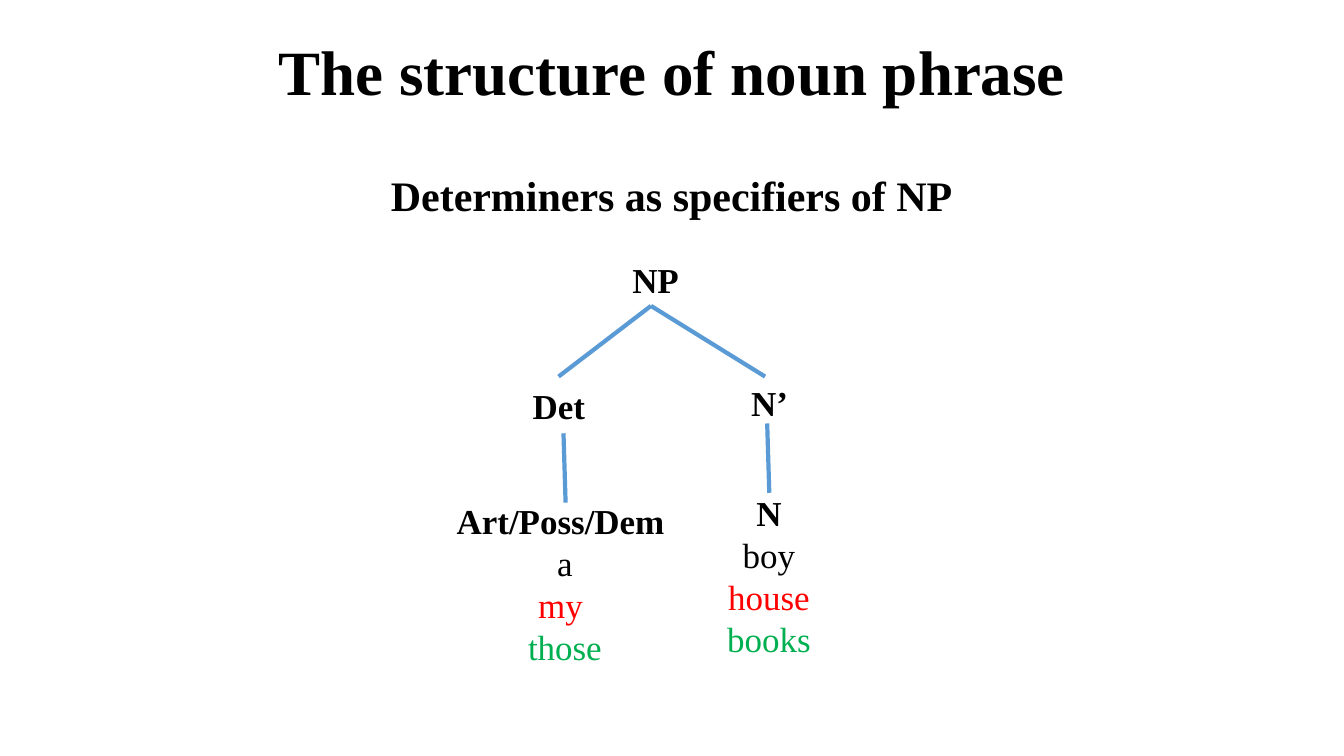
from dataclasses import dataclass

from lxml import etree
from pptx import Presentation
from pptx import util as u
from pptx.dml.color import RGBColor
from pptx.enum import shapes, text
from pptx.oxml import ns


@dataclass(frozen=True)
class Theme:
    font: str = "Times New Roman"
    background: str = "FFFFFF"
    ink: str = "000000"
    second: str = "FF0000"
    third: str = "00B050"
    branch: str = "5B9BD5"
    title_size: float = 45
    subtitle_size: float = 30
    node_size: float = 25
    branch_width: float = 3


class SlideBuilder:
    def __init__(self, slide, theme):
        self.slide = slide
        self.theme = theme
        fill = slide.background.fill
        fill.solid()
        fill.fore_color.rgb = RGBColor.from_string(theme.background)

    def text_box(self, box, lines, size, anchor=text.MSO_ANCHOR.MIDDLE,
                 line_spacing=1.0, space_before=0):
        shape = self.slide.shapes.add_textbox(*map(u.Pt, box))
        frame = shape.text_frame
        frame.word_wrap = True
        frame.vertical_anchor = anchor
        for index, (words, color, bold) in enumerate(lines):
            paragraph = frame.add_paragraph() if index else frame.paragraphs[0]
            paragraph.text = words
            paragraph.alignment = text.PP_ALIGN.CENTER
            paragraph.line_spacing = line_spacing
            paragraph.space_before = u.Pt(space_before)
            font = paragraph.font
            font.name = self.theme.font
            font.size = u.Pt(size)
            font.bold = bold
            font.color.rgb = RGBColor.from_string(color)

    def heading(self, box, words, size, **options):
        self.text_box(box, [(words, self.theme.ink, True)], size,
                      line_spacing=0.9, **options)

    def node(self, box, label, examples=()):
        theme = self.theme
        colors = (theme.ink, theme.second, theme.third)
        lines = [(label, theme.ink, True)]
        lines += [(word, color, False) for word, color in zip(examples, colors)]
        self.text_box(box, lines, theme.node_size)

    def branch(self, start, end):
        connector = self.slide.shapes.add_connector(
            shapes.MSO_CONNECTOR.STRAIGHT, *map(u.Pt, start + end))
        connector.line.color.rgb = RGBColor.from_string(self.theme.branch)
        connector.line.width = u.Pt(self.theme.branch_width)
        properties = connector._element.spPr
        etree.SubElement(properties, ns.qn("a:effectLst"))


def main():
    presentation = Presentation()
    presentation.slide_width = u.Pt(960)
    presentation.slide_height = u.Pt(540)
    slide = presentation.slides.add_slide(presentation.slide_layouts[6])
    theme = Theme()
    builder = SlideBuilder(slide, theme)

    builder.heading((66, 29, 828, 50), "The structure of noun phrase",
                    theme.title_size)
    builder.heading((66, 121.5, 828, 368), "Determiners as specifiers of NP",
                    theme.subtitle_size, anchor=text.MSO_ANCHOR.TOP,
                    space_before=10)

    node_size = (62.5, 36.5)
    builder.node((437, 181.5, *node_size), "NP")
    builder.node((371, 271.5, *node_size), "Det ")
    builder.node((518.5, 269.5, *node_size), "N’")
    builder.node((317.5, 361, 172, 112), "Art/Poss/Dem ", ("a", "my ", "those"))
    builder.node((497, 355, 104.5, 112), "N", ("boy", "house", "books"))

    apex = (465, 218.5)
    for end in ((399, 269), (546.5, 269)):
        builder.branch(apex, end)
    for left, top in ((402.5, 309.5), (548, 302.5)):
        builder.branch((left, top), (left + 1.5, top + 49.5))

    presentation.save("out.pptx")


if __name__ == "__main__":
    main()
